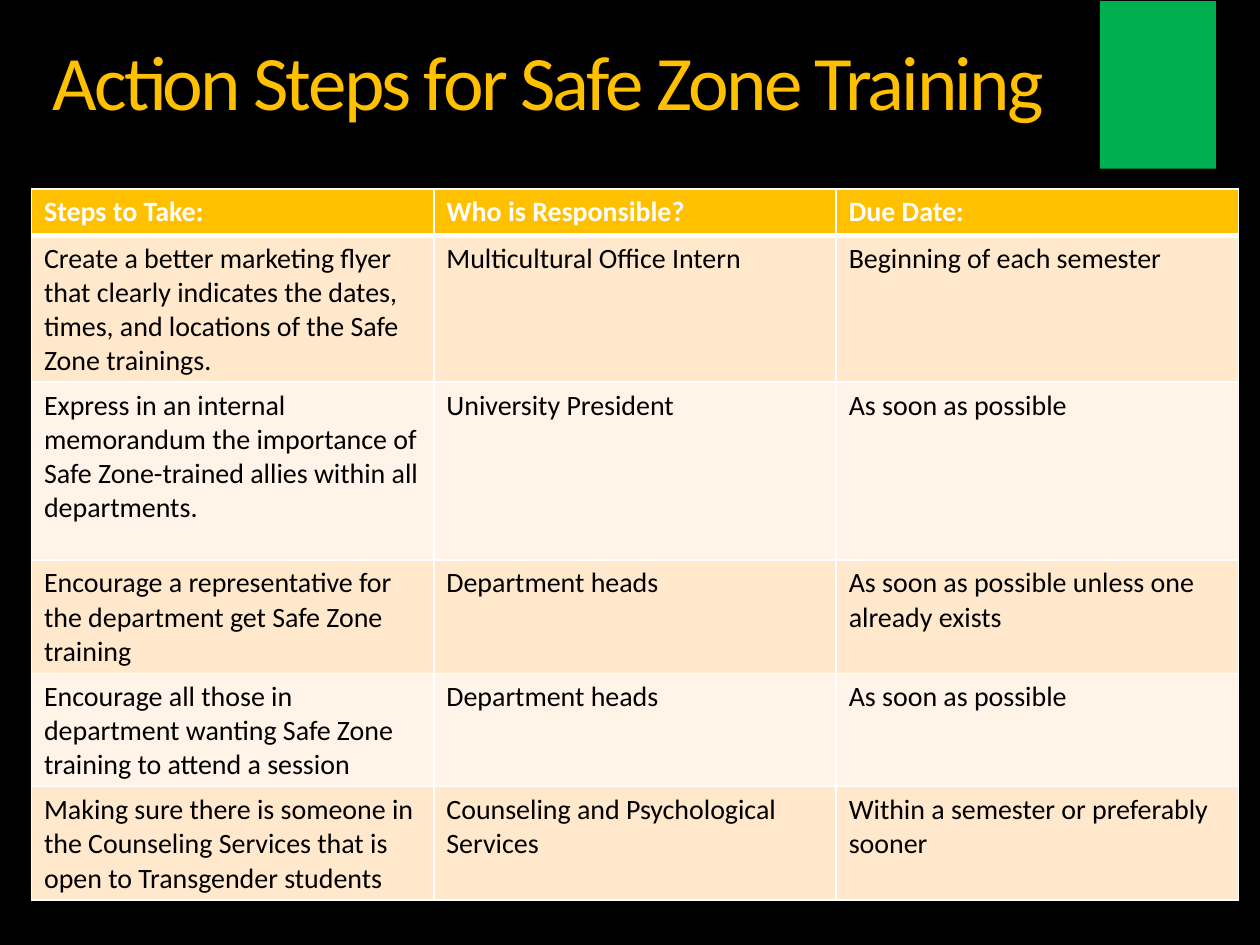
from dataclasses import dataclass

from lxml.etree import SubElement
from pptx import Presentation
from pptx.dml.color import RGBColor
from pptx.enum.shapes import MSO_SHAPE
from pptx.enum.text import MSO_ANCHOR, MSO_AUTO_SIZE, PP_ALIGN
from pptx.oxml.ns import qn
from pptx.util import Inches, Pt


@dataclass(frozen=True)
class Theme:
    font: str = "Calibri"
    background: str = "000000"
    gold: str = "FFC000"
    green: str = "00B050"
    header_text: str = "FFFFFF"
    body_text: str = "000000"
    border: str = "FFFFFF"
    bands: tuple = ("FFE8CC", "FFF4E7")
    title_size: int = 44
    table_size: int = 16


THEME = Theme()

HEADINGS = ("Steps to Take:", "Who is Responsible?", "Due Date:")
ACTION_STEPS = (
    ("Create a better marketing flyer that clearly indicates the dates, times, "
     "and locations of the Safe Zone trainings.",
     "Multicultural Office Intern", "Beginning of each semester"),
    ("Express in an internal memorandum the importance of Safe Zone-trained "
     "allies within all departments.",
     "University President", "As soon as possible"),
    ("Encourage a representative for the department get Safe Zone training",
     "Department heads", "As soon as possible unless one already exists"),
    ("Encourage all those in department wanting Safe Zone training to attend "
     "a session",
     "Department heads", "As soon as possible"),
    ("Making sure there is someone in the Counseling Services that is open to "
     "Transgender students",
     "Counseling and Psychological Services",
     "Within a semester or preferably sooner"),
)
ROW_HEIGHTS = (0.36, 1.14, 1.41, 0.88, 0.9, 0.9)


def set_fill(target, color):
    target.fill.solid()
    target.fill.fore_color.rgb = RGBColor.from_string(color)


def add_run(paragraph, text, size, color, bold=False):
    run = paragraph.add_run()
    run.text = text
    run.font.name = THEME.font
    run.font.size = Pt(size)
    run.font.bold = bold
    run.font.color.rgb = RGBColor.from_string(color)
    return run


def set_borders(cell, top, bottom):
    """Draw the four cell borders, ahead of the cell's fill."""
    properties = cell._tc.get_or_add_tcPr()
    widths = {"a:lnL": 1, "a:lnR": 1, "a:lnT": top, "a:lnB": bottom}
    for index, (tag, width) in enumerate(widths.items()):
        line = SubElement(properties, qn(tag), w=str(Pt(width)))
        fill = SubElement(line, qn("a:solidFill"))
        SubElement(fill, qn("a:srgbClr"), val=THEME.border)
        properties.insert(index, line)


def place_title(slide, left, top, width, height):
    title = slide.shapes.title
    title.left, title.top, title.width, title.height = map(
        Inches, (left, top, width, height))
    frame = title.text_frame
    frame.margin_left = frame.margin_right = 0
    frame.margin_top = frame.margin_bottom = 0
    frame.word_wrap = True
    frame.auto_size = MSO_AUTO_SIZE.SHAPE_TO_FIT_TEXT
    frame.vertical_anchor = MSO_ANCHOR.MIDDLE
    paragraph = frame.paragraphs[0]
    paragraph.alignment = PP_ALIGN.CENTER
    paragraph.line_spacing = 0.9
    run = add_run(paragraph, "Action Steps for Safe Zone Training ",
                  THEME.title_size, THEME.gold)
    run.font._element.set("spc", "-150")


def add_accent(slide, left, top, width, height):
    accent = slide.shapes.add_shape(
        MSO_SHAPE.RECTANGLE, *map(Inches, (left, top, width, height)))
    accent.shadow.inherit = False
    set_fill(accent, THEME.green)
    accent.line.fill.background()


def add_action_table(slide, left, top, width, height):
    rows = (HEADINGS, *ACTION_STEPS)
    table = slide.shapes.add_table(
        len(rows), len(HEADINGS),
        *map(Inches, (left, top, width, height))).table
    for row, row_height in zip(table.rows, ROW_HEIGHTS):
        row.height = Inches(row_height)
    for row_index, texts in enumerate(rows):
        is_header = row_index == 0
        fill = THEME.gold if is_header else THEME.bands[(row_index - 1) % 2]
        color = THEME.header_text if is_header else THEME.body_text
        for column_index, text in enumerate(texts):
            cell = table.cell(row_index, column_index)
            set_fill(cell, fill)
            # A thick rule parts the header from the body
            set_borders(cell, top=3 if row_index == 1 else 1,
                        bottom=3 if is_header else 1)
            add_run(cell.text_frame.paragraphs[0], text,
                    THEME.table_size, color, bold=is_header)


def main():
    presentation = Presentation()
    presentation.slide_width = Inches(10)
    presentation.slide_height = Inches(7.5)
    slide = presentation.slides.add_slide(presentation.slide_layouts[5])
    set_fill(slide.background, THEME.background)

    # Heading band
    place_title(slide, 0.34, 0.34, 8.14, 0.67)
    add_accent(slide, 8.73, 0.01, 0.92, 1.33)

    # Action steps
    add_action_table(slide, 0.25, 1.5, 9.58, sum(ROW_HEIGHTS))

    presentation.save("out.pptx")


if __name__ == "__main__":
    main()
